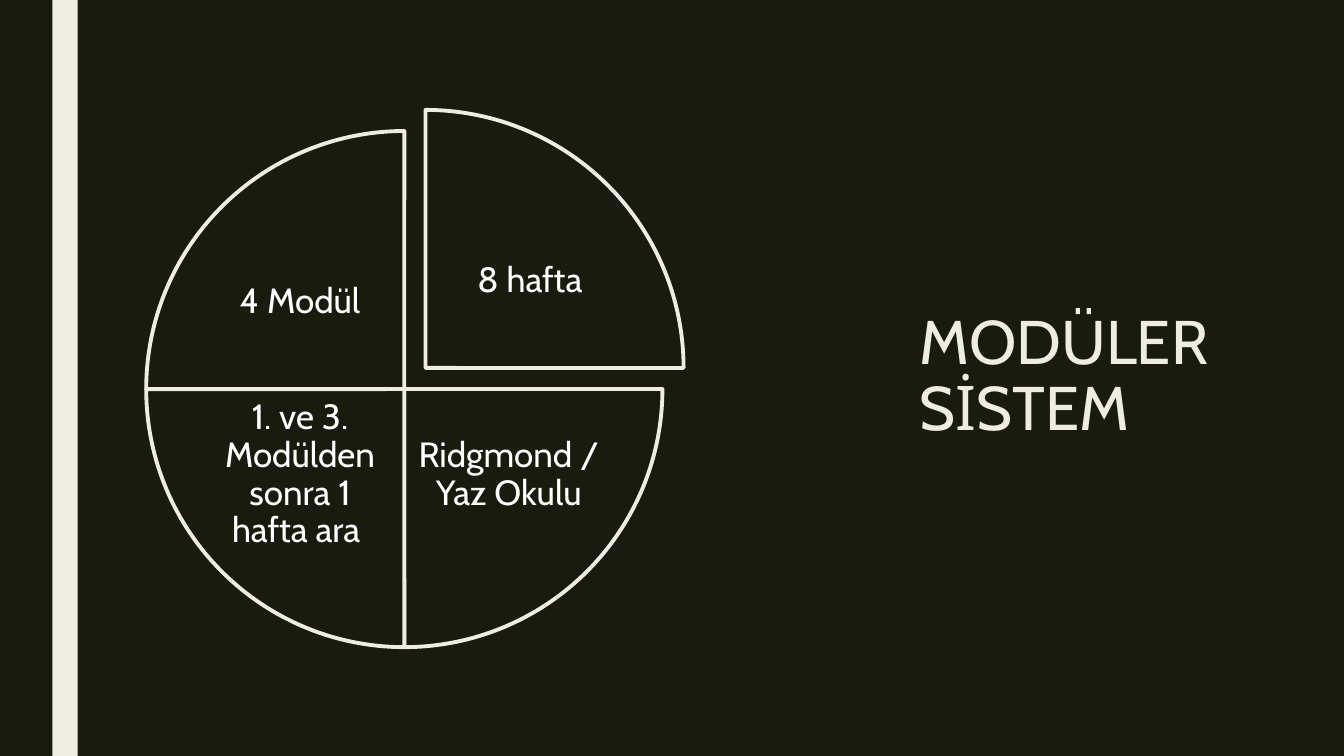
from pptx import Presentation
from pptx.dml.color import RGBColor
from pptx.enum.shapes import MSO_SHAPE
from pptx.enum.text import MSO_ANCHOR, MSO_AUTO_SIZE, PP_ALIGN
from pptx.util import Inches, Pt

DARK = RGBColor(0x19, 0x1B, 0x0E)
CREAM = RGBColor(0xEF, 0xED, 0xE3)
WHITE = RGBColor(0xFF, 0xFF, 0xFF)
FONT = "Cabin"

QUARTERS = [
    ("8 hafta", 162, 0, 1, 0, 0.21),
    ("Ridgmond / Yaz Okulu", 0, 54, 1, 1, 0),
    ("1. ve 3. Modülden sonra 1 hafta ara ", 54, 108, 0, 1, 0),
    ("4 Modül", 108, 162, 0, 0, 0),
]


def write_text(shape, text, size, color, align, spacing, inset):
    frame = shape.text_frame
    frame.word_wrap = True
    frame.auto_size = MSO_AUTO_SIZE.NONE
    frame.vertical_anchor = MSO_ANCHOR.MIDDLE
    frame.margin_left = frame.margin_right = Inches(inset[0])
    frame.margin_top = frame.margin_bottom = Inches(inset[1])
    para = frame.paragraphs[0]
    para.alignment = align
    para.line_spacing = spacing
    span = para.add_run()
    span.text = text
    span.font.name = FONT
    span.font.size = Pt(size)
    span.font.color.rgb = color


def add_side_bar(page, left, top, width, height):
    bar = page.shapes.add_shape(
        MSO_SHAPE.RECTANGLE, Inches(left), Inches(top), Inches(width), Inches(height)
    )
    bar.shadow.inherit = False
    bar.fill.solid()
    bar.fill.fore_color.rgb = CREAM
    bar.line.fill.background()


def place_title(page, left, top, width, height):
    title = page.shapes.title
    title.left, title.top = Inches(left), Inches(top)
    title.width, title.height = Inches(width), Inches(height)
    write_text(title, "MODÜLER SİSTEM", size=44, color=CREAM,
               align=PP_ALIGN.LEFT, spacing=0.89, inset=(0.1, 0.05))


def add_wheel(page, left, top, size):
    label_width, label_height = 1.89, 1.52
    columns, rows = (0.58, 2.65), (0.94, 2.65)
    for text, start, end, column, row, shift in QUARTERS:
        slice_left, slice_top = left + shift, top - shift
        quarter = page.shapes.add_shape(
            MSO_SHAPE.PIE, Inches(slice_left), Inches(slice_top), Inches(size), Inches(size)
        )
        quarter.adjustments[0] = start
        quarter.adjustments[1] = end
        quarter.shadow.inherit = False
        quarter.fill.solid()
        quarter.fill.fore_color.rgb = DARK
        quarter.line.color.rgb = CREAM
        quarter.line.width = Pt(2.75)
        label = page.shapes.add_textbox(
            Inches(slice_left + columns[column]), Inches(slice_top + rows[row]),
            Inches(label_width), Inches(label_height)
        )
        write_text(label, text, size=25, color=WHITE,
                   align=PP_ALIGN.CENTER, spacing=0.9, inset=(0.03, 0.03))


def main():
    deck = Presentation()
    deck.slide_width, deck.slide_height = Inches(13.33), Inches(7.5)
    page = deck.slides.add_slide(deck.slide_layouts[5])
    page.background.fill.solid()
    page.background.fill.fore_color.rgb = DARK
    add_side_bar(page, 0.52, 0, 0.25, 7.5)
    place_title(page, 9.02, 0.7, 3.61, 6.1)
    add_wheel(page, 1.45, 1.3, 5.12)
    deck.save("out.pptx")


if __name__ == "__main__":
    main()
